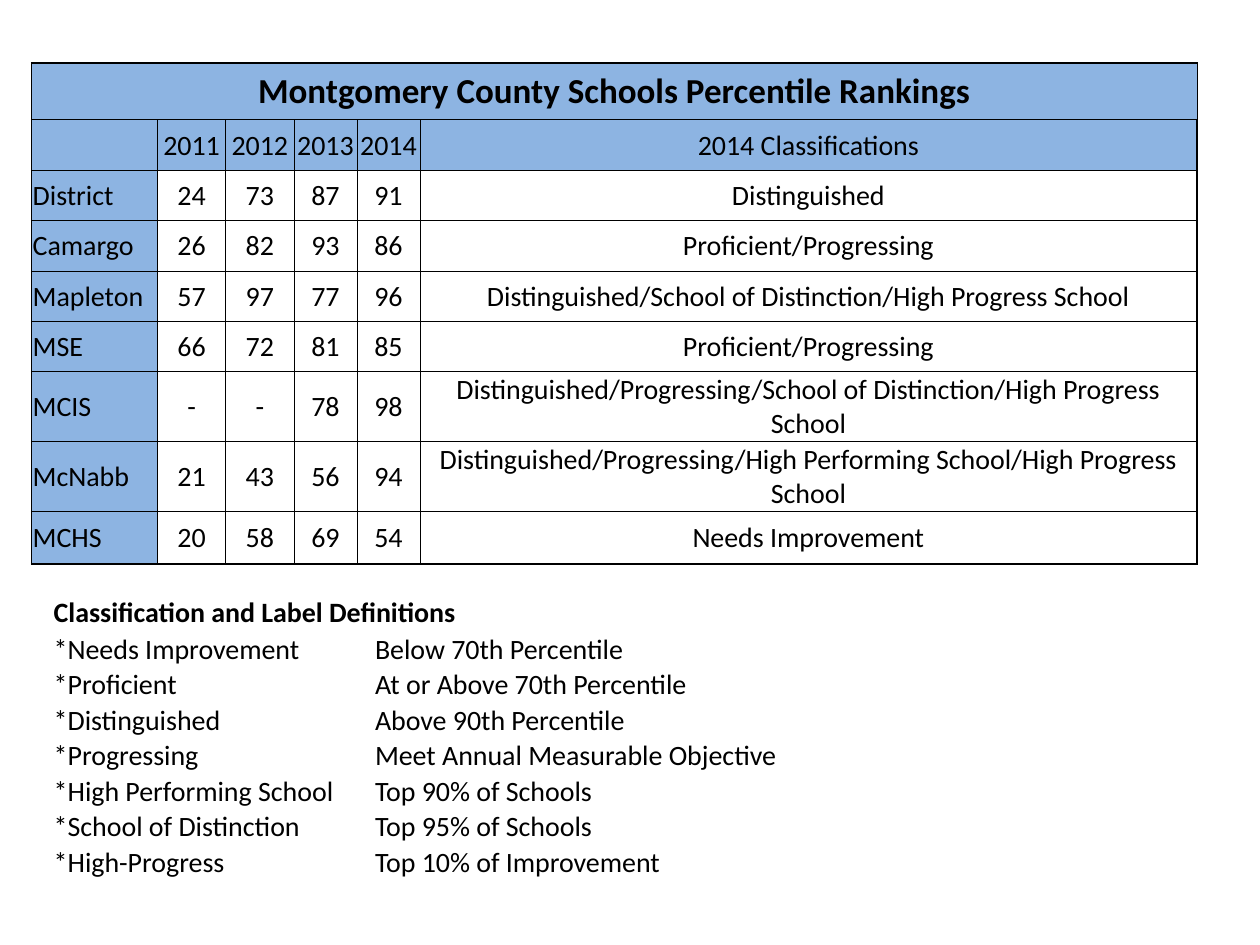
from lxml.etree import SubElement
from pptx import Presentation
from pptx.dml.color import RGBColor
from pptx.enum.text import MSO_ANCHOR as Anchor, PP_ALIGN as Align
from pptx.oxml.ns import qn
from pptx.util import Pt

BLUE, BLACK = "8DB4E2", "000000"
PLAIN_STYLE = "{2D5ABB26-0587-4C30-8999-92F81FD0307C}"

TITLE = "Montgomery County Schools Percentile Rankings"
RANKINGS = [
    ("", "2011", "2012", "2013", "2014", "2014 Classifications"),
    ("District", "24", "73", "87", "91", "Distinguished"),
    ("Camargo", "26", "82", "93", "86", "Proficient/Progressing"),
    ("Mapleton", "57", "97", "77", "96", "Distinguished/School of Distinction/High Progress School"),
    ("MSE", "66", "72", "81", "85", "Proficient/Progressing"),
    ("MCIS", "-", "-", "78", "98",
     "Distinguished/Progressing/School of Distinction/High Progress School"),
    ("McNabb", "21", "43", "56", "94",
     "Distinguished/Progressing/High Performing School/High Progress School"),
    ("MCHS", "20", "58", "69", "54", "Needs Improvement"),
]
HEADING = "Classification and Label Definitions"
DEFINITIONS = [
    ("*Needs Improvement", "Below 70th Percentile"),
    ("*Proficient", "At or Above 70th Percentile"),
    ("*Distinguished", "Above 90th Percentile"),
    ("*Progressing", "Meet Annual Measurable Objective"),
    ("*High Performing School", "Top 90% of Schools"),
    ("*School of Distinction", "Top 95% of Schools"),
    ("*High-Progress", "Top 10% of Improvement"),
]


def color(value):
    """Turn a hex string into a colour."""
    return RGBColor.from_string(value)


def write(cell, text, size=16, bold=False, align=Align.LEFT):
    """Put formatted text in a table cell."""
    cell.vertical_anchor = Anchor.MIDDLE
    cell.margin_left = cell.margin_top = cell.margin_right = Pt(0.72)
    cell.margin_bottom = 0
    para = cell.text_frame.paragraphs[0]
    para.text, para.alignment = text, align
    font = para.font
    font.name, font.size, font.bold = "Calibri", Pt(size), bold
    font.color.rgb = color(BLACK)
    for span in para.runs:
        span.font.name, span.font.size, span.font.bold = "Calibri", Pt(size), bold
        span.font.color.rgb = color(BLACK)


def set_borders(cell, **widths):
    """Draw black cell borders with the given widths in points."""
    properties = cell._tc.get_or_add_tcPr()
    for side in "LRTB":
        line = SubElement(properties, qn(f"a:ln{side}"), w=str(Pt(widths[side])))
        fill = SubElement(line, qn("a:solidFill"))
        SubElement(fill, qn("a:srgbClr"), val=BLACK)


def add_plain_table(page, box, widths, heights):
    """Add an unstyled table with the given column widths and row heights."""
    frame = page.shapes.add_table(len(heights), len(widths), *map(Pt, box))
    frame.element.find(".//" + qn("a:tableStyleId")).text = PLAIN_STYLE
    table = frame.table
    table.first_row = table.horz_banding = False
    for column, width in zip(table.columns, widths):
        column.width = Pt(width)
    for row, height in zip(table.rows, heights):
        row.height = Pt(height)
    return table


def add_rankings(page, box):
    """Place the bordered table of school rankings."""
    widths = [72, 39, 39, 36, 36, 444]
    heights = [32.4] + [28.8] * 7 + [30.24]
    table = add_plain_table(page, box, widths, heights)
    last_row, last_column = len(heights) - 1, len(widths) - 1
    for r, values in enumerate([(TITLE,) + ("",) * last_column] + RANKINGS):
        for c, text in enumerate(values):
            cell = table.cell(r, c)
            label = c == 0 and r > 0
            write(cell, text, size=16 if r else 20, bold=r == 0,
                  align=Align.LEFT if label else Align.CENTER)
            set_borders(cell, L=0.5 if c else 1, T=0.5 if r else 1,
                        R=1 if c == last_column else 0.5,
                        B=1 if r == last_row else 0.5)
            if r < 2 or c == 0:
                cell.fill.solid()
                cell.fill.fore_color.rgb = color(BLUE)
            else:
                cell.fill.background()
    table.cell(0, 0).merge(table.cell(0, last_column))


def add_definitions(page, box):
    """Place the borderless table of label definitions."""
    table = add_plain_table(page, box, [183.6, 273.6], [21.6] + [19.44] * 7)
    for r, values in enumerate([(HEADING, "")] + DEFINITIONS):
        for c, text in enumerate(values):
            write(table.cell(r, c), text, bold=r == 0)
            table.cell(r, c).fill.background()
    table.cell(0, 0).merge(table.cell(0, 1))


def main():
    """Build the slide and save the deck."""
    deck = Presentation()
    deck.slide_width, deck.slide_height = Pt(720), Pt(540)
    page = deck.slides.add_slide(deck.slide_layouts[6])
    add_rankings(page, (18, 36, 666, 284.4))
    add_definitions(page, (30, 339, 457.2, 161.3))
    deck.save("out.pptx")


if __name__ == "__main__":
    main()
